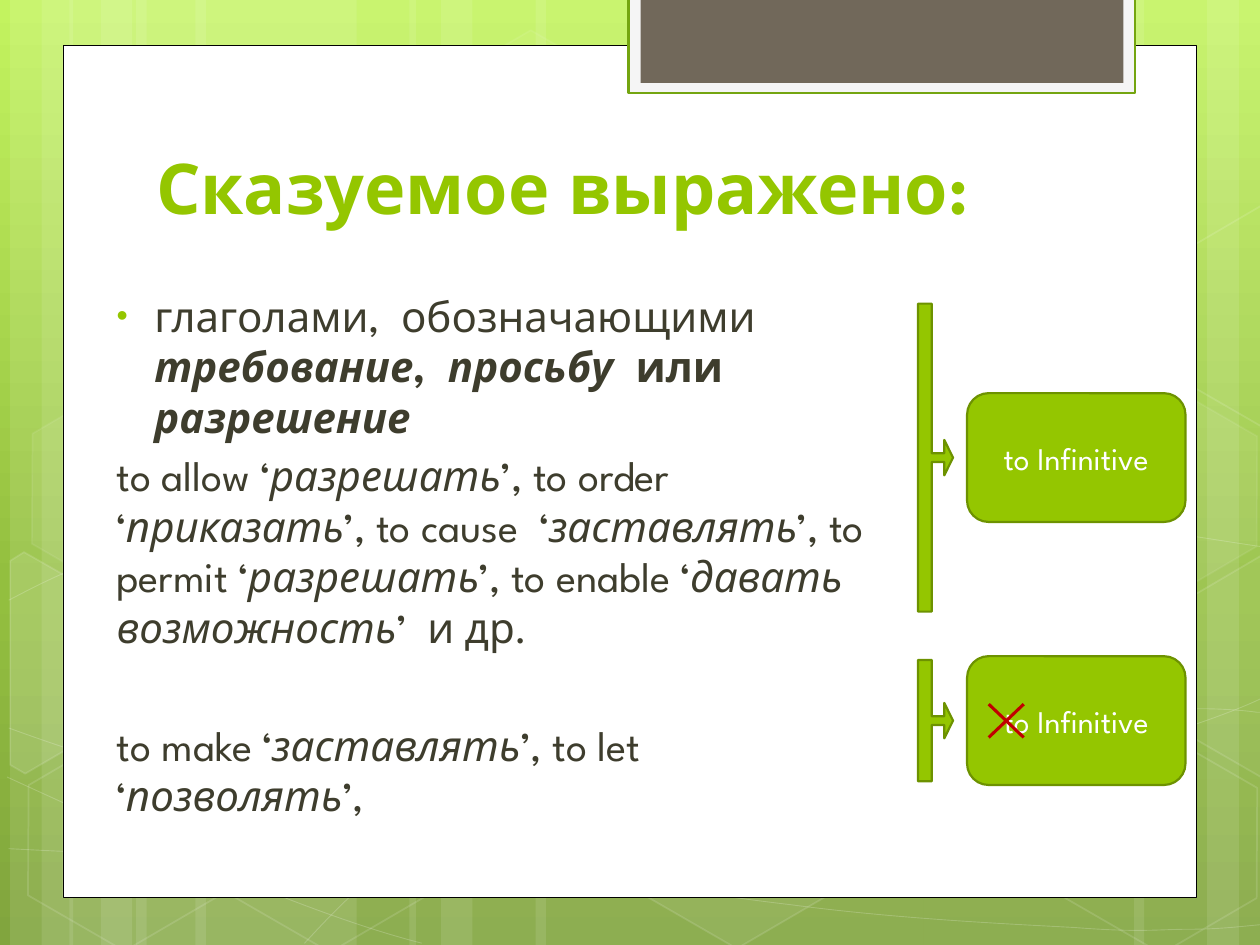
import copy
import math

import pptx
import pptx.dml.color
import pptx.enum.shapes
import pptx.enum.text
import pptx.oxml
import pptx.oxml.ns
import pptx.util
from lxml import etree

Pt = pptx.util.Pt
SHAPE = pptx.enum.shapes.MSO_SHAPE
ALIGN = pptx.enum.text.PP_ALIGN
ANCHOR = pptx.enum.text.MSO_ANCHOR
qn = pptx.oxml.ns.qn

FONT = "League Spartan"
COLORS = {
    "sky": "C3F35F", "leaf": "93BF3F", "moss": "81A53E", "white": "FFFFFF",
    "black": "000000", "frame": "F5F5F5", "frame_edge": "74A510", "tab": "71685A",
    "accent": "94C600", "accent_edge": "6D9200", "text": "3E3D2D", "cross": "C00000",
}
BACKDROP = [("sky", 0), ("leaf", 0.62), ("moss", 1)]
TILT = 30

STRIPES = [
    (77.8, 126), (5.8, 36), (23.8, 60), (111.6, 126), (39.6, 36), (57.6, 60),
    (527.8, 126), (689.8, 36), (648, 60), (306, 221.8), (234, 36), (252, 60),
]
WAVES = [
    [(5, 485), (44, 487), (83, 489), (137, 488), (191, 487), (258, 486), (330, 479),
     (402, 472), (504, 458), (570, 444), (636, 431), (703, 409), (725, 397)],
    [(5, 343), (26, 332), (47, 321), (87, 310), (128, 300), (187, 284), (250, 279),
     (314, 274), (392, 273), (471, 279), (550, 284), (682, 307), (725, 313)],
    [(4, 444), (91, 484), (178, 523), (241, 539)],
    [(5, 416), (27, 424), (50, 432), (92, 444), (134, 454), (197, 472), (257, 485),
     (317, 497), (392, 510), (452, 517), (512, 525), (576, 528), (614, 530),
     (652, 533), (662, 531), (680, 531), (699, 531), (712, 529), (725, 528)],
    [(174, 539), (187, 525), (200, 511), (217, 498), (235, 485), (259, 470), (279, 460),
     (300, 450), (312, 446), (338, 439), (364, 431), (413, 421), (438, 416),
     (464, 411), (467, 411), (490, 410), (512, 408), (547, 405), (572, 405),
     (597, 404), (638, 405), (638, 405), (654, 405), (670, 405), (686, 405),
     (699, 405), (711, 406), (718, 407), (724, 407), (722, 407), (724, 407)],
]
HEXAGONS = [
    (240.5, 25.9, 4, 8), (357.8, 424.1, 6, 12), (7.9, 425.5, None, 12),
    (10.1, 224.6, 7, 8), (125.3, 426.2, None, 12), (542.2, 326.2, 10, 12),
    (600.5, 427, None, 12), (600.5, 226.1, 7, 8),
]
CUT_HEXAGONS = [
    ([(5.8, 320.4), (13.7, 315.4), (69.1, 347), (68.4, 410.4), (14.4, 442), (5.8, 437)],
     (25.9, 385.2), 10),
    ([(666.7, 349.2), (720.7, 317.5), (726.5, 321.1), (726.5, 441.4), (721.4, 444.2),
      (666.7, 412.6)], (709.2, 374.4), 4),
    ([(666.7, 149), (720.7, 117.4), (727.2, 121), (726.5, 241.2), (721.4, 244),
      (666.7, 212.4)], (709.2, 173.5), None),
]

VERB_GROUPS = [
    ["глаголами,  обозначающими  ", "требование", ",  ", "просьбу", "  или  ", "разрешение"],
    ["to allow ‘", "разрешать", "’, to order ‘", "приказать", "’, to cause  ‘", "заставлять",
     "’, to permit ‘", "разрешать", "’, to enable ‘", "давать возможность", "’  и др."],
    ["to make ‘", "заставлять", "’, to let ‘", "позволять", "’,"],
]


def rgb(color):
    return pptx.dml.color.RGBColor.from_string(COLORS[color])


def paint(part, color, opacity=100):
    part.fill.solid()
    part.fill.fore_color.rgb = rgb(color)
    if opacity < 100:
        tone = part.fill._xPr.find(qn("a:solidFill"))[0]
        etree.SubElement(tone, qn("a:alpha")).set("val", str(opacity * 1000))


def style(shape, fill=None, fill_opacity=100, edge=None, width=1.25, edge_opacity=100):
    shape.shadow.inherit = False
    if fill:
        paint(shape, fill, fill_opacity)
    else:
        shape.fill.background()
    if edge:
        shape.line.width = Pt(width)
        paint(shape.line, edge, edge_opacity)
    else:
        shape.line.fill.background()


def add_block(slide, kind, box, **look):
    block = slide.shapes.add_shape(kind, *map(Pt, box))
    style(block, **look)
    return block


def add_outline(slide, points, close, **look):
    corners = [(Pt(x), Pt(y)) for x, y in points]
    builder = slide.shapes.build_freeform(*corners[0])
    builder.add_line_segments(corners[1:], close=close)
    outline = builder.convert_to_shape()
    style(outline, **look)
    return outline


def add_wave(slide, knots):
    wave = add_outline(slide, knots, False, edge="white", width=0.5, edge_opacity=20)
    route = wave.element.find(".//" + qn("a:path"))
    lines = route.findall(qn("a:lnTo"))
    for start in range(0, len(lines), 3):
        curve = etree.SubElement(route, qn("a:cubicBezTo"))
        for line in lines[start:start + 3]:
            curve.append(line[0])
            route.remove(line)


def untilt(point, center):
    angle = math.radians(TILT)
    dx, dy = point[0] - center[0], point[1] - center[1]
    return (center[0] + dx * math.cos(angle) + dy * math.sin(angle),
            center[1] + dy * math.cos(angle) - dx * math.sin(angle))


def add_run(paragraph, text, size, color, bold=False, italic=False):
    run = paragraph.add_run()
    run.text = text
    run.font.name = FONT
    run.font.size = Pt(size)
    run.font.bold = bold
    run.font.italic = italic
    run.font.color.rgb = rgb(color)


def set_backdrop(slide):
    fill = slide.background.fill
    fill.gradient()
    fill.gradient_angle = 270
    stops = slide.element.find(".//" + qn("a:gsLst"))
    stops.insert(1, copy.deepcopy(stops[0]))
    for stop, (color, position) in zip(fill.gradient_stops, BACKDROP):
        stop.color.rgb = rgb(color)
        stop.position = position


def add_decor(slide):
    for left, width in STRIPES:
        add_block(slide, SHAPE.RECTANGLE, (left, 0, width, 540), fill="white", fill_opacity=10)
    for knots in WAVES:
        add_wave(slide, knots)
    for left, top, opacity, edge_opacity in HEXAGONS:
        hexagon = add_block(slide, SHAPE.HEXAGON, (left, top, 126, 109.4),
                            fill=opacity and "white", fill_opacity=opacity,
                            edge="white", width=1, edge_opacity=edge_opacity)
        hexagon.adjustments[0] = 0.285
        hexagon.rotation = TILT
    for corners, center, opacity in CUT_HEXAGONS:
        level = [untilt(corner, center) for corner in corners]
        cut = add_outline(slide, level, True, fill=opacity and "white", fill_opacity=opacity,
                          edge="white", width=1, edge_opacity=12)
        cut.rotation = TILT
    add_block(slide, SHAPE.RECTANGLE, (36, 25.9, 648, 487.2), fill="white", edge="black", width=0.5)
    add_block(slide, SHAPE.RECTANGLE, (359.2, -1.4, 289.6, 54.7), fill="frame", edge="frame_edge")
    add_block(slide, SHAPE.RECTANGLE, (366, -1.4, 276, 48.8), fill="tab")


def place(placeholder, box, anchor):
    placeholder.left, placeholder.top, placeholder.width, placeholder.height = map(Pt, box)
    placeholder.element.getparent().append(placeholder.element)
    frame = placeholder.text_frame
    frame.word_wrap = True
    frame.auto_size = pptx.enum.text.MSO_AUTO_SIZE.NONE
    frame.vertical_anchor = anchor
    return frame


def add_heading(slide):
    heading = place(slide.shapes.title, (82, 81, 553, 53.3), ANCHOR.BOTTOM).paragraphs[0]
    heading.alignment = ALIGN.LEFT
    add_run(heading, "Сказуемое выражено:", 40, "accent", bold=True)


def set_bullet(paragraph, margin, indent, mark=None):
    props = paragraph._p.get_or_add_pPr()
    props.set("marL", str(Pt(margin)))
    props.set("indent", str(Pt(indent)))
    if not mark:
        etree.SubElement(props, qn("a:buNone"))
        return
    tone = etree.SubElement(props, qn("a:buClr"))
    etree.SubElement(tone, qn("a:srgbClr")).set("val", COLORS["accent"])
    etree.SubElement(props, qn("a:buSzPct")).set("val", "76000")
    etree.SubElement(props, qn("a:buFont")).set("typeface", "Arial")
    etree.SubElement(props, qn("a:buChar")).set("char", mark)


def add_verbs(slide):
    frame = place(slide.placeholders[1], (54, 162.3, 459.4, 296.6), ANCHOR.TOP)
    for number, fragments in enumerate(VERB_GROUPS):
        lead = number == 0
        group = frame.paragraphs[0] if lead else frame.add_paragraph()
        group.alignment = ALIGN.LEFT
        group.space_before = Pt(38.6 if number == 2 else 4.8)
        if lead:
            set_bullet(group, 27, -21.6, "•")
        else:
            set_bullet(group, 5.4, 0)
        for index, fragment in enumerate(fragments):
            add_run(group, fragment, 24, "text", bold=lead and index > 0, italic=index % 2 == 1)


def add_rule(slide, middle, span):
    look = {"fill": "accent", "edge": "accent_edge"}
    bracket = add_block(slide, SHAPE.RIGHT_ARROW_CALLOUT,
                        (524.6, middle - span / 2, 20, span), **look)
    for index, value in enumerate((0.25, 0.507, 0.25, 0.393)):
        bracket.adjustments[index] = value
    form = add_block(slide, SHAPE.ROUNDED_RECTANGLE, (552.6, middle - 36.8, 124.8, 73.6), **look)
    form.text_frame.word_wrap = True
    form.text_frame.vertical_anchor = ANCHOR.MIDDLE
    label = form.text_frame.paragraphs[0]
    label.alignment = ALIGN.CENTER
    add_run(label, "to Infinitive", 18, "white")


def add_stroke(slide, start, end):
    stroke = slide.shapes.add_connector(pptx.enum.shapes.MSO_CONNECTOR.STRAIGHT,
                                        *map(Pt, start + end))
    stroke.line.width = Pt(1.75)
    stroke.line.color.rgb = rgb("cross")
    etree.SubElement(stroke.element.spPr, qn("a:effectLst"))


def main():
    deck = pptx.Presentation()
    deck.slide_width, deck.slide_height = Pt(720), Pt(540)
    slide = deck.slides.add_slide(deck.slide_layouts[1])
    set_backdrop(slide)
    add_decor(slide)
    add_heading(slide)
    add_verbs(slide)
    add_rule(slide, 261.5, 176)
    add_rule(slide, 411.8, 69.3)
    add_stroke(slide, (565, 402.4), (585, 421.4))
    add_stroke(slide, (585, 402.4), (565, 421.4))
    deck.save("out.pptx")


if __name__ == "__main__":
    main()
